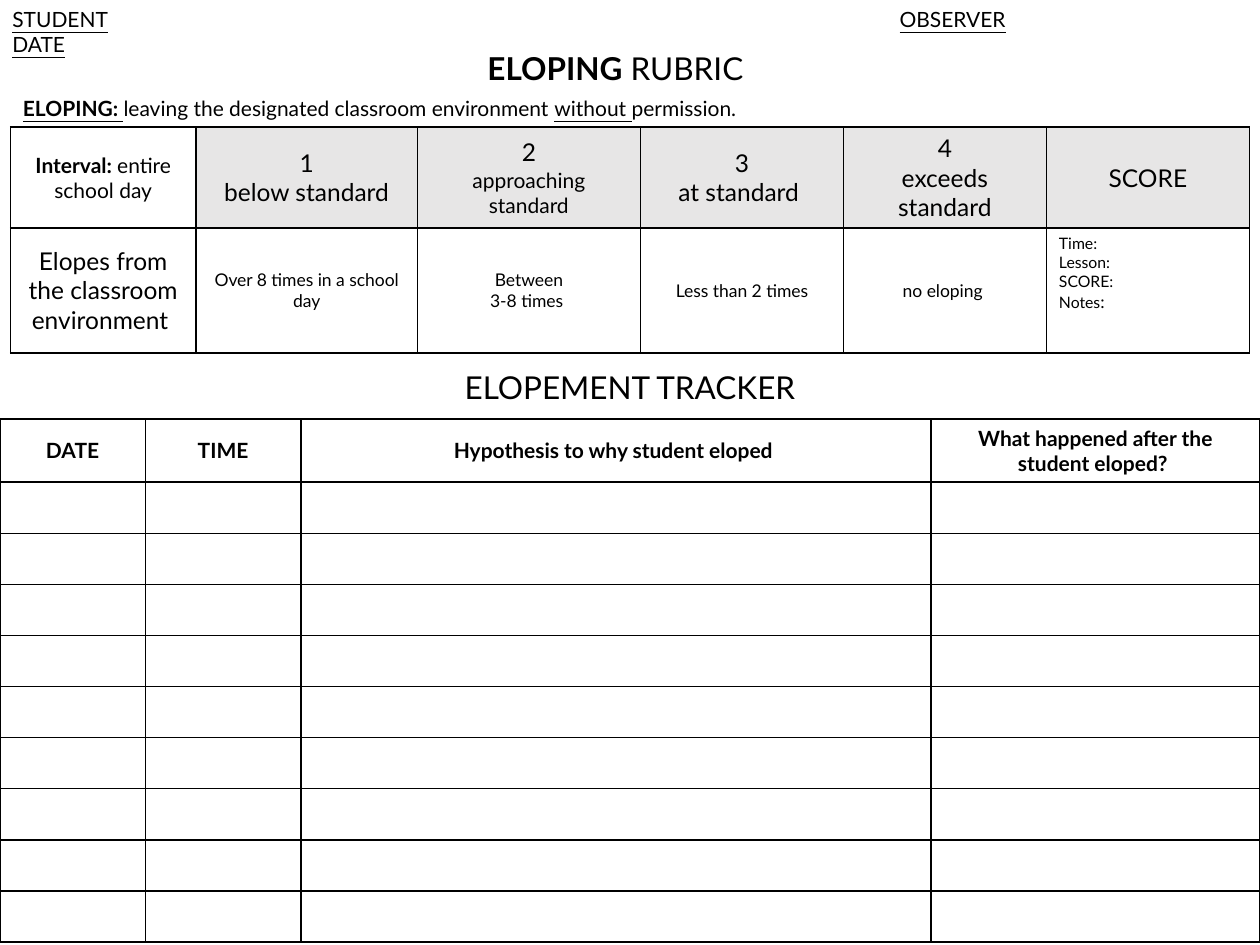
from lxml import etree
from pptx import Presentation
from pptx.dml.color import RGBColor
from pptx.enum.text import MSO_ANCHOR, MSO_AUTO_SIZE, PP_ALIGN
from pptx.oxml.ns import qn
from pptx.util import Pt

LEFT, CENTER = PP_ALIGN.LEFT, PP_ALIGN.CENTER
TOP, MIDDLE = MSO_ANCHOR.TOP, MSO_ANCHOR.MIDDLE
FIT = MSO_AUTO_SIZE.SHAPE_TO_FIT_TEXT
TITLE_ONLY = 5
BLACK, GREY = "000000", "E7E6E6"


def color(value):
    return RGBColor.from_string(value)


def write(tf, *runs, size=12, align=LEFT, font="Lato", fill=BLACK):
    """Add runs, each a string or (string, format); a newline starts a paragraph."""
    p = tf.paragraphs[0]
    p.alignment = align
    for run in runs:
        text, fmt = (run, {}) if isinstance(run, str) else run
        for i, line in enumerate(text.split("\n")):
            if i:
                p = tf.add_paragraph()
                p.alignment = align
            if not line:
                continue
            r = p.add_run()
            r.text = line
            r.font.name = font
            r.font.size = Pt(fmt.get("size", size))
            r.font.bold = fmt.get("bold", False)
            r.font.underline = fmt.get("underline", False)
            r.font.color.rgb = color(fill)


def add_tab_stop(p, pos):
    tabs = etree.SubElement(p._p.get_or_add_pPr(), qn("a:tabLst"))
    etree.SubElement(tabs, qn("a:tab"), pos=str(Pt(pos)), algn="l")


def add_borders(cell, line=BLACK, width=1):
    tcPr = cell._tc.get_or_add_tcPr()
    for i, side in enumerate(("lnL", "lnR", "lnT", "lnB")):
        ln = etree.Element(qn(f"a:{side}"), w=str(Pt(width)))
        fill = etree.SubElement(ln, qn("a:solidFill"))
        etree.SubElement(fill, qn("a:srgbClr"), val=line)
        tcPr.insert(i, ln)


class Sheet:
    """Holds the current slide and the style of its elements."""

    def __init__(self, slide):
        self.s = slide

    def place(self, sp, x, y, w, h):
        sp.left, sp.top, sp.width, sp.height = Pt(x), Pt(y), Pt(w), Pt(h)

    def title(self, box, *runs, **fmt):
        sp = self.s.shapes.title
        self.place(sp, *box)
        return self.fill_frame(sp.text_frame, runs, fmt)

    def text(self, box, *runs, **fmt):
        sp = self.s.shapes.add_textbox(*map(Pt, box))
        return self.fill_frame(sp.text_frame, runs, fmt)

    def fill_frame(self, tf, runs, fmt):
        tf.word_wrap = True
        tf.auto_size = FIT
        tf.vertical_anchor = TOP
        write(tf, *runs, **fmt)
        return tf

    def table(self, x, y, cols, rows):
        frame = self.s.shapes.add_table(len(rows), len(cols), Pt(x), Pt(y),
                                        Pt(sum(cols)), Pt(sum(rows)))
        table = frame.table
        table.first_row = table.horz_banding = False
        for col, width in zip(table.columns, cols):
            col.width = Pt(width)
        for row, height in zip(table.rows, rows):
            row.height = Pt(height)
        for cell in table.iter_cells():
            cell.fill.background()
            add_borders(cell)
        return table

    def cell(self, cell, *runs, fill=None, anchor=MIDDLE, align=CENTER, **fmt):
        cell.vertical_anchor = anchor
        if fill:
            cell.fill.solid()
            cell.fill.fore_color.rgb = color(fill)
        write(cell.text_frame, *runs, align=align, **fmt)


def main():
    prs = Presentation()
    prs.slide_width, prs.slide_height = Pt(720), Pt(540)
    sheet = Sheet(prs.slides.add_slide(prs.slide_layouts[TITLE_ONLY]))
    bold, under = {"bold": True}, {"underline": True}

    sheet.title((0, 24.5, 708, 29), ("ELOPING", bold), " RUBRIC ",
                size=18, align=CENTER)

    rubric = sheet.table(6, 72.7, [106, 126.5, 127.5, 116, 116, 116], [57.6, 71.3])
    sheet.cell(rubric.cell(0, 0), ("Interval: ", bold), "entire school day")
    levels = [
        ["1\nbelow standard"],
        ["2\n", ("approaching standard", {"size": 12})],
        ["3\nat standard "],
        ["4\nexceeds standard"],
        ["SCORE"],
    ]
    for col, runs in enumerate(levels, 1):
        sheet.cell(rubric.cell(0, col), *runs, size=14, fill=GREY)
    sheet.cell(rubric.cell(1, 0), "Elopes from the classroom environment ", size=14)
    criteria = ["Over 8 times in a school day", "Between\n3-8 times ",
                "Less than 2 times", "no eloping "]
    for col, text in enumerate(criteria, 1):
        sheet.cell(rubric.cell(1, col), text, size=10)
    sheet.cell(rubric.cell(1, 5), "Time:\nLesson:\nSCORE: \nNotes",
               (":", {"size": 10}), size=9, anchor=TOP, align=LEFT)

    sheet.text((6, 51, 708, 21.8), ("ELOPING: ", {"bold": True, "underline": True}),
               "leaving the designated classroom environment ",
               ("without ", under), "permission.")

    tracker = sheet.table(0, 239.5, [83, 89, 360, 188], [36] + [29.2] * 9)
    headings = ["DATE", "TIME", "Hypothesis to why student eloped ",
                "What happened after the student eloped? "]
    for col, text in enumerate(headings):
        sheet.cell(tracker.cell(0, col), (text, bold))

    sheet.text((6, 206.7, 708, 29), "ELOPEMENT TRACKER", size=18, align=CENTER)

    tf = sheet.text((0, 0, 720, 36), ("STUDENT", under), "\t",
                    ("OBSERVER", under), ("\nDATE", under))
    add_tab_stop(tf.paragraphs[0], 507)

    prs.save("out.pptx")


if __name__ == "__main__":
    main()
